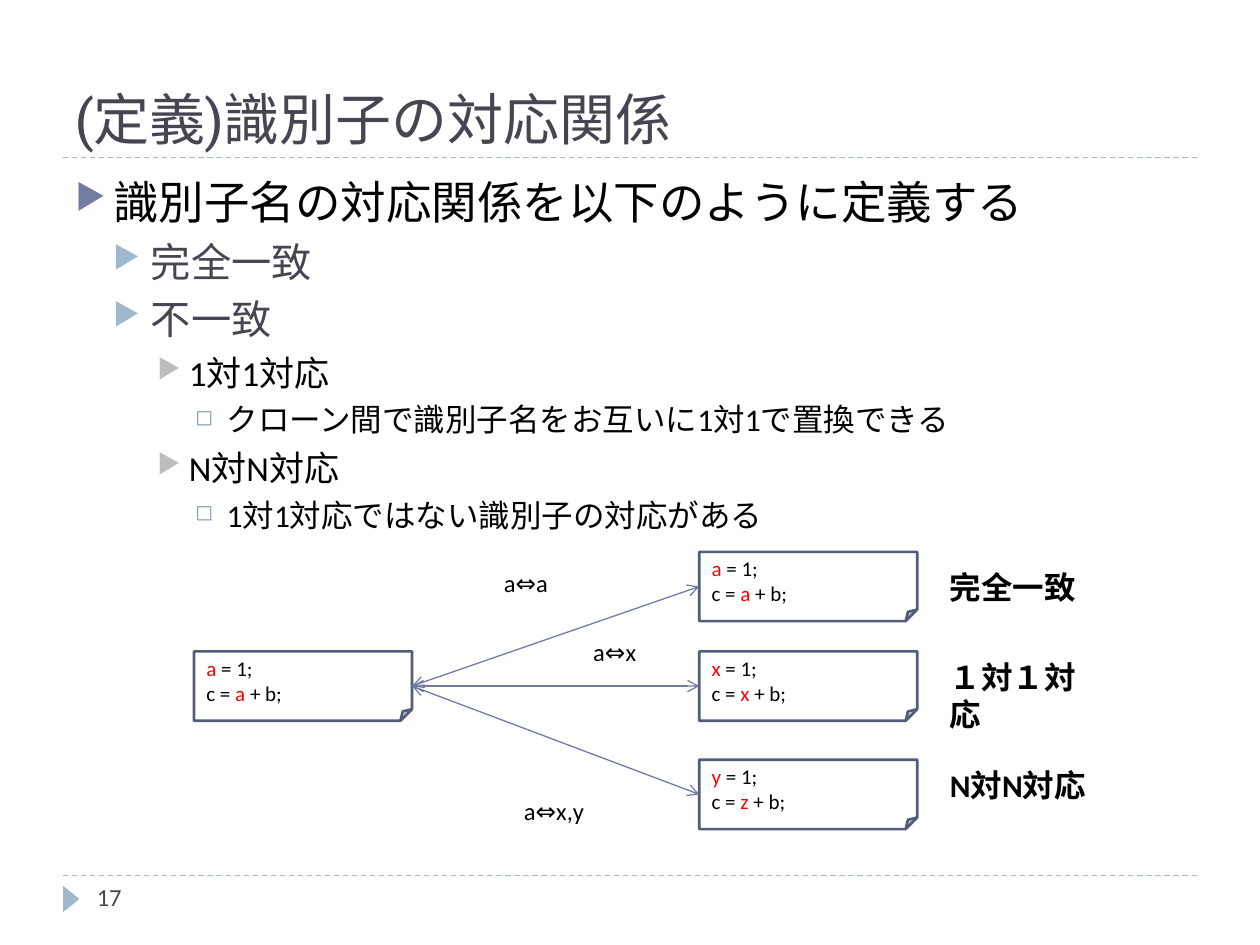
from typing import NamedTuple

import pptx
import pptx.dml.color
import pptx.enum.dml
import pptx.enum.shapes
import pptx.enum.text
import pptx.oxml
import pptx.oxml.ns
import pptx.util
from pptx.util import Inches

SHAPE = pptx.enum.shapes.MSO_SHAPE
ANCHOR = pptx.enum.text.MSO_ANCHOR
BLACK, SLATE, RED = "000000", "464653", "FF0000"
PALE_BLUE, BLUE, NAVY = "9FB8CD", "727CA3", "545C79"


class Level(NamedTuple):
    size: int
    color: str
    left: float
    hanging: float
    before: int
    bullet: str
    bullet_color: str
    bullet_percent: int


class Code(NamedTuple):
    x: float
    y: float
    first: str
    second: str


class Label(NamedTuple):
    x: float
    y: float
    w: float
    text: str


LEVELS = [
    Level(26, BLACK, 0.3, 0.3, 6, "▶", BLUE, 76),
    Level(23, SLATE, 0.6, 0.3, 5, "▶", PALE_BLUE, 76),
    Level(20, BLACK, 0.9, 0.25, 5, "▶", "BDBDBD", 76),
    Level(18, BLACK, 1.2, 0.25, 4, "◻", "8CA2B5", 70),
]
OUTLINE = [
    (0, "識別子名の対応関係を以下のように定義する"),
    (1, "完全一致"),
    (1, "不一致"),
    (2, "1対1対応"),
    (3, "クローン間で識別子名をお互いに1対1で置換できる"),
    (2, "N対N対応"),
    (3, "1対1対応ではない識別子の対応がある"),
]
SOURCE = Code(1.54, 5.17, "a", "a")
TARGETS = [
    Code(5.55, 4.38, "a", "a"),
    Code(5.55, 5.17, "x", "x"),
    Code(5.55, 6.03, "y", "z"),
]
MAPPINGS = [
    Label(3.9, 4.46, 0.63, "a⇔a"),
    Label(4.61, 5.01, 0.63, "a⇔x"),
    Label(4.06, 6.27, 0.87, "a⇔x,y"),
]
KINDS = [
    Label(7.44, 4.46, 1.42, "完全一致"),
    Label(7.44, 5.17, 1.42, "１対１対応"),
    Label(7.44, 6.03, 1.42, "N対N対応"),
]


def rgb(color: str):
    return pptx.dml.color.RGBColor.from_string(color)


def add_run(p, text: str, size=18, color=BLACK, font="Calibri", bold=False):
    r = p.add_run()
    r.text = text
    r.font.size = pptx.util.Pt(size)
    r.font.name = font
    r.font.bold = bold
    r.font.color.rgb = rgb(color)


def add_frame(s, x: float, y: float, w: float, h: float, anchor=ANCHOR.TOP):
    tf = s.shapes.add_textbox(Inches(x), Inches(y), Inches(w), Inches(h)).text_frame
    tf.word_wrap = True
    tf.vertical_anchor = anchor
    return tf


def add_text(s, x: float, y: float, w: float, h: float, text: str,
             anchor=ANCHOR.TOP, **style):
    add_run(add_frame(s, x, y, w, h, anchor).paragraphs[0], text, **style)


def add_xml(parent, xml: str):
    tag, closing = xml.split(" ", 1)
    ns = pptx.oxml.ns.nsdecls("a")
    parent.append(pptx.oxml.parse_xml(f"<a:{tag} {ns} {closing}"))


def add_line(s, x1: float, y1: float, x2: float, y2: float, color: str):
    line = s.shapes.add_connector(pptx.enum.shapes.MSO_CONNECTOR.STRAIGHT,
                                  Inches(x1), Inches(y1), Inches(x2), Inches(y2))
    line.line.color.rgb = rgb(color)
    line.line.width = pptx.util.Pt(0.75)
    add_xml(line._element.spPr, "effectLst />")
    return line


def add_rule(s, y: float):
    line = add_line(s, 0.5, y, 9.5, y, PALE_BLUE)
    line.line.dash_style = pptx.enum.dml.MSO_LINE.DASH


def add_outline(s):
    tf = add_frame(s, 0.5, 1.33, 9, 5.4)
    for i, (depth, text) in enumerate(OUTLINE):
        level = LEVELS[depth]
        p = tf.add_paragraph() if i else tf.paragraphs[0]
        p.level = depth
        p.space_before = pptx.util.Pt(level.before)
        add_run(p, text, size=level.size, color=level.color)
        pPr = p._p.get_or_add_pPr()
        pPr.set("marL", str(Inches(level.left)))
        pPr.set("indent", str(-Inches(level.hanging)))
        add_xml(pPr, f'buClr ><a:srgbClr val="{level.bullet_color}"/></a:buClr>')
        add_xml(pPr, f'buSzPct val="{level.bullet_percent * 1000}"/>')
        add_xml(pPr, f'buChar char="{level.bullet}"/>')


def add_code(s, code: Code):
    sp = s.shapes.add_shape(SHAPE.FOLDED_CORNER, Inches(code.x), Inches(code.y),
                            Inches(1.73), Inches(0.55))
    sp.shadow.inherit = False
    sp.fill.solid()
    sp.fill.fore_color.rgb = rgb("FFFFFF")
    sp.line.color.rgb = rgb(NAVY)
    sp.line.width = pptx.util.Pt(1.5)
    tf = sp.text_frame
    tf.word_wrap = True
    tf.vertical_anchor = ANCHOR.MIDDLE
    lines = [
        [(code.first, RED), (" = 1;", BLACK)],
        [("c = ", BLACK), (code.second, RED), (" + b;", BLACK)],
    ]
    for i, parts in enumerate(lines):
        p = tf.add_paragraph() if i else tf.paragraphs[0]
        p.alignment = pptx.enum.text.PP_ALIGN.LEFT
        for text, color in parts:
            add_run(p, text, size=12, color=color)
    return sp


def add_double_arrow(s, start, end):
    """Join the right side of start to the left side of end."""
    arrow = add_line(s, 0, 0, 1, 1, BLUE)
    arrow.begin_connect(start, 3)
    arrow.end_connect(end, 1)
    ln = arrow.line._get_or_add_ln()
    for tag in ("headEnd", "tailEnd"):
        add_xml(ln, f'{tag} type="arrow"/>')


def main():
    prs = pptx.Presentation()
    prs.slide_width, prs.slide_height = Inches(10), Inches(7.5)
    s = prs.slides.add_slide(prs.slide_layouts[6])

    for y in (6.95, 1.25):
        add_rule(s, y)
    marker = s.shapes.add_shape(SHAPE.ISOSCELES_TRIANGLE, Inches(0.46), Inches(7.07),
                                Inches(0.21), Inches(0.13))
    marker.rotation = 90
    marker.shadow.inherit = False
    marker.fill.solid()
    marker.fill.fore_color.rgb = rgb(PALE_BLUE)
    marker.line.fill.background()

    add_text(s, 0.5, 0.17, 9, 1.08, "(定義)識別子の対応関係", anchor=ANCHOR.BOTTOM,
             size=32, color=SLATE, font="Roboto Slab")
    add_text(s, 0.67, 6.95, 2.17, 0.4, "17", size=14, color=SLATE)
    add_outline(s)

    source = add_code(s, SOURCE)
    targets = [add_code(s, code) for code in TARGETS]
    for target in targets:
        add_double_arrow(s, source, target)
    for label in MAPPINGS:
        add_text(s, label.x, label.y, label.w, 0.34, label.text, size=14)
    for label in KINDS:
        add_text(s, label.x, label.y, label.w, 0.4, label.text, size=18, bold=True)

    prs.save("out.pptx")


if __name__ == "__main__":
    main()
